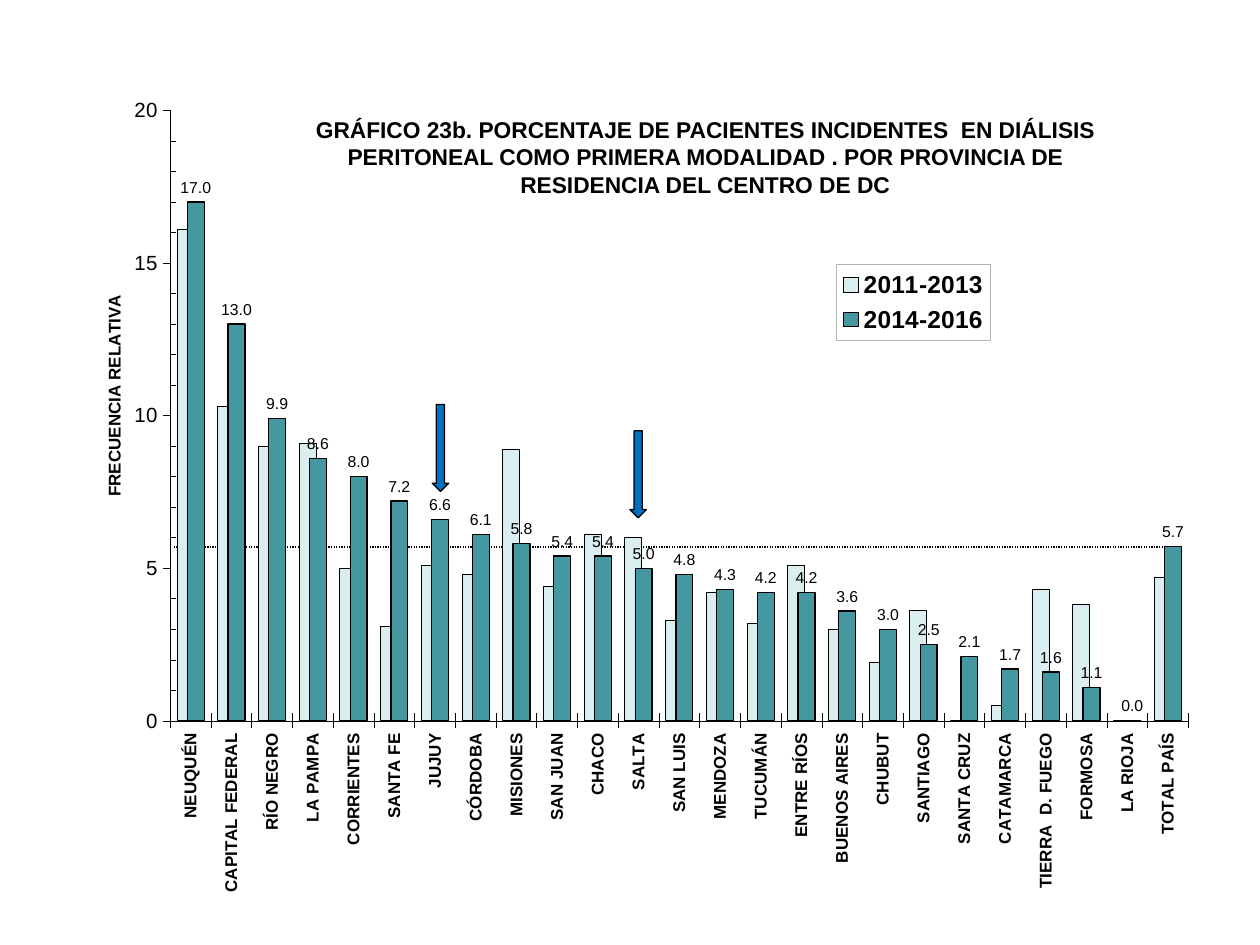
from dataclasses import dataclass

from pptx import Presentation
from pptx.chart.data import CategoryChartData
from pptx.dml.color import RGBColor
from pptx.enum.chart import (
    XL_CHART_TYPE, XL_LABEL_POSITION, XL_LEGEND_POSITION, XL_TICK_MARK)
from pptx.enum.dml import MSO_LINE
from pptx.enum.shapes import MSO_CONNECTOR, MSO_SHAPE
from pptx.enum.text import MSO_ANCHOR, MSO_AUTO_SIZE, PP_ALIGN
from pptx.oxml import parse_xml
from pptx.oxml.ns import nsdecls
from pptx.util import Pt


@dataclass(frozen=True)
class Theme:
    """Colours, font and type sizes of the slide."""
    font: str = "Arial"
    ink: RGBColor = RGBColor(0x00, 0x00, 0x00)
    earlier: RGBColor = RGBColor(0xDA, 0xED, 0xEF)
    later: RGBColor = RGBColor(0x45, 0x97, 0xA0)
    arrow: RGBColor = RGBColor(0x00, 0x70, 0xC0)
    legend_border: str = "B3B3B3"
    title_size: float = 13
    legend_size: float = 14
    scale_size: float = 11.7
    category_size: float = 9.7
    label_size: float = 9


THEME = Theme()
TITLE = ("GRÁFICO 23b. PORCENTAJE DE PACIENTES INCIDENTES  EN DIÁLISIS "
         "PERITONEAL COMO PRIMERA MODALIDAD . POR PROVINCIA DE "
         "RESIDENCIA DEL CENTRO DE DC")
RATES = [
    ("NEUQUÉN", 16.1, 17.0), ("CAPITAL FEDERAL", 10.3, 13.0),
    ("RÍO NEGRO", 9.0, 9.9), ("LA PAMPA", 9.1, 8.6),
    ("CORRIENTES", 5.0, 8.0), ("SANTA FE", 3.1, 7.2),
    ("JUJUY", 5.1, 6.6), ("CÓRDOBA", 4.8, 6.1),
    ("MISIONES", 8.9, 5.8), ("SAN JUAN", 4.4, 5.4),
    ("CHACO", 6.1, 5.4), ("SALTA", 6.0, 5.0),
    ("SAN LUIS", 3.3, 4.8), ("MENDOZA", 4.2, 4.3),
    ("TUCUMÁN", 3.2, 4.2), ("ENTRE RÍOS", 5.1, 4.2),
    ("BUENOS AIRES", 3.0, 3.6), ("CHUBUT", 1.9, 3.0),
    ("SANTIAGO", 3.6, 2.5), ("SANTA CRUZ", 0, 2.1),
    ("CATAMARCA", 0.5, 1.7), ("TIERRA  D. FUEGO", 4.3, 1.6),
    ("FORMOSA", 3.8, 1.1), ("LA RIOJA", 0, 0), ("TOTAL PAÍS", 4.7, 5.7),
]


def style_font(font, size, bold=False):
    """Give a font the slide's typeface and ink."""
    font.name = THEME.font
    font.size = Pt(size)
    font.bold = bold
    font.color.rgb = THEME.ink


def style_line(line, width):
    """Draw a line in ink at the given width."""
    line.color.rgb = THEME.ink
    line.width = Pt(width)


def manual_layout(x, y, width=None, height=None, inner=False):
    """Return a chart layout element in fractions of the chart."""
    parts = ['<c:layoutTarget val="inner"/>'] if inner else []
    parts += ['<c:xMode val="edge"/>', '<c:yMode val="edge"/>']
    for tag, value in zip("xywh", (x, y, width, height)):
        if value is not None:
            parts.append(f'<c:{tag} val="{value}"/>')
    return parse_xml(f'<c:layout {nsdecls("c")}><c:manualLayout>'
                     f'{"".join(parts)}</c:manualLayout></c:layout>')


def chart_area(border=None):
    """Return unfilled chart area properties with an optional border."""
    stroke = (f'<a:solidFill><a:srgbClr val="{border}"/></a:solidFill>'
              if border else '<a:noFill/>')
    return parse_xml(f'<c:spPr {nsdecls("c", "a")}><a:noFill/>'
                     f'<a:ln w="6350">{stroke}</a:ln></c:spPr>')


def place_title(page, box):
    """Move and format the title placeholder."""
    title = page.shapes.title
    title.left, title.top, title.width, title.height = map(Pt, box)
    frame = title.text_frame
    frame.word_wrap = True
    frame.auto_size = MSO_AUTO_SIZE.NONE
    frame.vertical_anchor = MSO_ANCHOR.TOP
    para = frame.paragraphs[0]
    para.alignment = PP_ALIGN.CENTER
    span = para.add_run()
    span.text = TITLE
    style_font(span.font, THEME.title_size, True)


def place_average(page, left, right, level):
    """Draw the dotted line at the national level."""
    rule = page.shapes.add_connector(
        MSO_CONNECTOR.STRAIGHT, Pt(right), Pt(level), Pt(left), Pt(level))
    style_line(rule.line, 0.75)
    rule.line.dash_style = MSO_LINE.ROUND_DOT
    rule._element.spPr.append(parse_xml(f'<a:effectLst {nsdecls("a")}/>'))


def style_axes(chart):
    """Format the province axis and the frequency axis."""
    provinces, scale = chart.category_axis, chart.value_axis
    provinces.major_tick_mark = XL_TICK_MARK.CROSS
    style_font(provinces.tick_labels.font, THEME.category_size, True)
    turn = provinces._element.txPr.bodyPr
    turn.set("rot", "-5400000")
    turn.set("vert", "horz")
    scale.minimum_scale, scale.maximum_scale = 0, 20
    scale.major_unit, scale.minor_unit = 5, 1
    scale.major_tick_mark = XL_TICK_MARK.OUTSIDE
    scale.minor_tick_mark = XL_TICK_MARK.INSIDE
    scale.has_major_gridlines = False
    scale.tick_labels.number_format = "0"
    scale.tick_labels.number_format_is_linked = False
    style_font(scale.tick_labels.font, THEME.scale_size)
    for axis in (provinces, scale):
        style_line(axis.format.line, 0.25)
    span = scale.axis_title.text_frame.paragraphs[0].add_run()
    span.text = "FRECUENCIA RELATIVA"
    style_font(span.font, THEME.category_size, True)
    heading = scale.axis_title._element
    for layout in heading.findall("{*}layout"):
        heading.remove(layout)
    heading.find("{*}tx").addnext(manual_layout(0.025, 0.24))


def style_bars(chart):
    """Format both periods and label the later one."""
    plot = chart.plots[0]
    plot.gap_width, plot.overlap = 80, 39
    plot.vary_by_categories = False
    looks = ((THEME.earlier, 0.5), (THEME.later, 0.75))
    for series, (colour, width) in zip(plot.series, looks):
        series.format.fill.solid()
        series.format.fill.fore_color.rgb = colour
        style_line(series.format.line, width)
    labels = plot.series[1].data_labels
    labels.show_value = True
    labels.number_format = "0.0"
    labels.number_format_is_linked = False
    labels.position = XL_LABEL_POSITION.OUTSIDE_END
    style_font(labels.font, THEME.label_size)


def style_legend(chart):
    """Place the framed legend over the plot."""
    chart.has_legend = True
    legend = chart.legend
    legend.position = XL_LEGEND_POSITION.LEFT
    legend.include_in_layout = False
    style_font(legend.font, THEME.legend_size, True)
    element = legend._element
    for layout in element.findall("{*}layout"):
        element.remove(layout)
    overlay = element.find("{*}overlay")
    overlay.set("val", "1")
    overlay.addprevious(manual_layout(0.683, 0.207, 0.137, 0.091))
    overlay.addnext(chart_area(THEME.legend_border))


def place_chart(page, box):
    """Add the column chart of both periods by province."""
    provinces, earlier, later = zip(*RATES)
    data = CategoryChartData()
    data.categories = provinces
    data.add_series("2011-2013", earlier)
    data.add_series("2014-2016", later)
    chart = page.shapes.add_chart(
        XL_CHART_TYPE.COLUMN_CLUSTERED, *map(Pt, box), data).chart
    chart.has_title = False
    style_font(chart.font, THEME.scale_size)
    style_axes(chart)
    style_bars(chart)
    style_legend(chart)
    body = chart._chartSpace.chart
    area = body.plotArea
    for layout in area.findall("{*}layout"):
        area.remove(layout)
    area.insert(0, manual_layout(0.088, 0.022, 0.909, 0.733, inner=True))
    area.append(chart_area())
    body.addnext(chart_area())


def place_arrow(page, box):
    """Add a downward arrow that marks a province."""
    arrow = page.shapes.add_shape(MSO_SHAPE.DOWN_ARROW, *map(Pt, box))
    arrow.shadow.inherit = False
    arrow.fill.solid()
    arrow.fill.fore_color.rgb = THEME.arrow
    style_line(arrow.line, 0.75)


def main():
    """Build and save the slide."""
    deck = Presentation()
    deck.slide_width, deck.slide_height = Pt(720), Pt(540)
    page = deck.slides.add_slide(deck.slide_layouts[5])
    place_average(page, 99.4, 666, 312.5)
    place_chart(page, (41, 52.6, 640, 476))
    place_title(page, (156.2, 62.6, 493.2, 54))
    for left, top in ((360, 246.2), (247, 231.1)):
        place_arrow(page, (left, top, 9.4, 49.7))
    deck.save("out.pptx")


if __name__ == "__main__":
    main()
